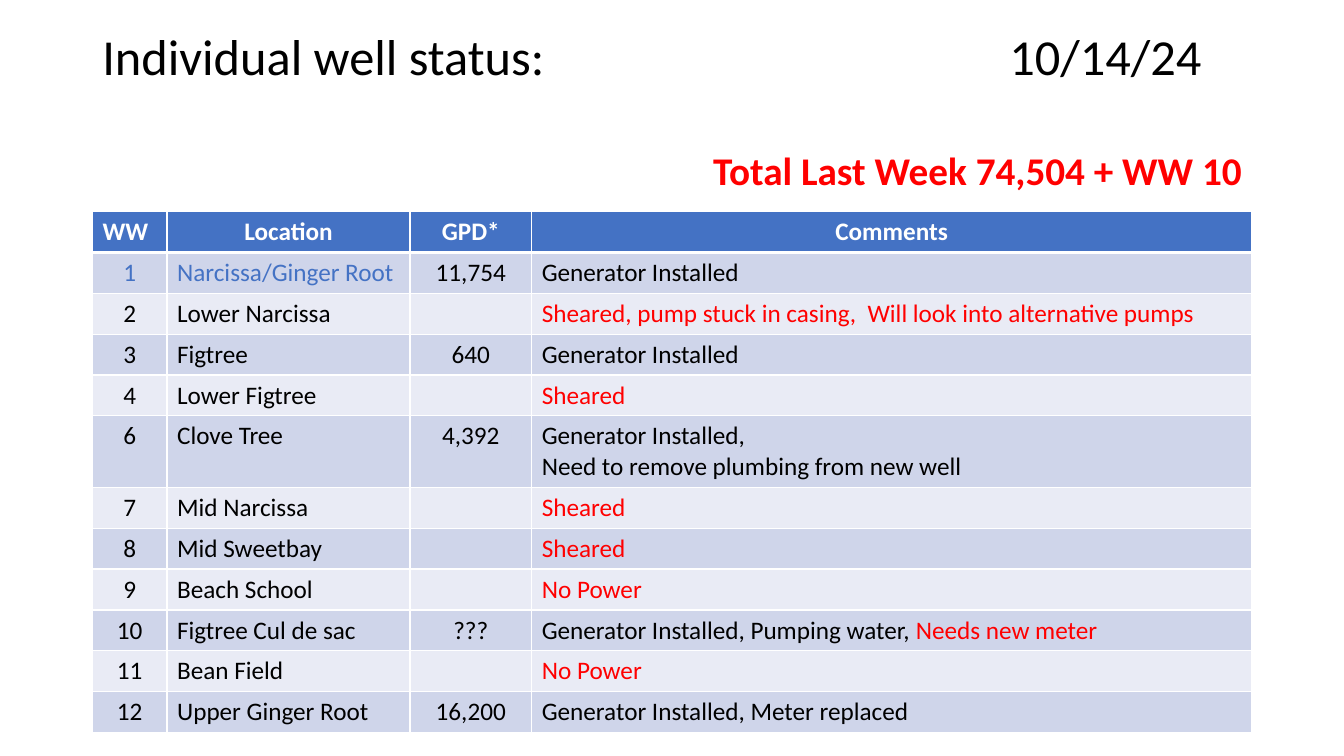
from lxml import etree
from pptx import Presentation, util as u
from pptx.dml.color import RGBColor
from pptx.enum import text
from pptx.oxml import ns

BLACK, WHITE, RED, BLUE = "000000", "FFFFFF", "FF0000", "4472C4"
BANDS = ("CFD5EA", "E9EBF5")
CENTER, LEFT = text.PP_ALIGN.CENTER, text.PP_ALIGN.LEFT


def color(value):
    return RGBColor.from_string(value)


class StatusSlide:
    font_name = "Calibri"

    def __init__(self, presentation):
        self.slide = presentation.slides.add_slide(presentation.slide_layouts[6])

    def add_run(self, paragraph, words, size, fill, bold=False):
        run = paragraph.add_run()
        run.text = words
        style = {"name": self.font_name, "size": u.Pt(size), "bold": bold}
        for name, value in style.items():
            setattr(run.font, name, value)
        run.font.color.rgb = color(fill)

    def add_title(self, box, lines, tab):
        frame = self.slide.shapes.add_textbox(*map(u.Cm, box)).text_frame
        style = {"word_wrap": True, "vertical_anchor": text.MSO_ANCHOR.MIDDLE}
        for name, value in style.items():
            setattr(frame, name, value)
        for index, (words, size, fill, bold, layout) in enumerate(lines):
            paragraph = frame.add_paragraph() if index else frame.paragraphs[0]
            for name, value in layout.items():
                setattr(paragraph, name, value)
            self.add_run(paragraph, words, size, fill, bold)
        # Tab stop that places the date
        properties = frame.paragraphs[0]._p.get_or_add_pPr()
        stops = etree.SubElement(properties, ns.qn("a:tabLst"))
        etree.SubElement(stops, ns.qn("a:tab"), pos=str(u.Cm(tab)), algn="l")

    def add_borders(self, cell, widths):
        properties = cell._tc.get_or_add_tcPr()
        for side, width in widths.items():
            line = etree.SubElement(properties, ns.qn(f"a:ln{side}"), w=str(u.Pt(width)))
            fill = etree.SubElement(line, ns.qn("a:solidFill"))
            etree.SubElement(fill, ns.qn("a:srgbClr"), val=WHITE)

    def fill_cell(self, cell, paragraphs, fill, align, bold, widths):
        self.add_borders(cell, widths)
        cell.fill.solid()
        cell.fill.fore_color.rgb = color(fill)
        for index, runs in enumerate(paragraphs):
            frame = cell.text_frame
            paragraph = frame.add_paragraph() if index else frame.paragraphs[0]
            paragraph.alignment = align
            for words, font_color in runs:
                self.add_run(paragraph, words, 18, font_color, bold)

    def add_table(self, left, top, columns, heights, header, rows):
        table = self.slide.shapes.add_table(
            len(heights), len(columns), u.Cm(left), u.Cm(top),
            u.Cm(sum(columns)), u.Cm(sum(heights))).table
        for column, width in zip(table.columns, columns):
            column.width = u.Cm(width)
        for row, height in zip(table.rows, heights):
            row.height = u.Cm(height)
        for index, words in enumerate(header):
            self.fill_cell(table.cell(0, index), [[(words, WHITE)]], BLUE,
                           CENTER if index else LEFT, True,
                           {"L": 1, "R": 1, "T": 1, "B": 3})
        for number, (well, location, gallons, comments) in enumerate(rows, 1):
            accent = BLUE if number == 1 else BLACK
            cells = ([[(well, accent)]], [[(location, accent)]],
                     [[(gallons, BLACK)]] if gallons else [], comments)
            widths = {"L": 1, "R": 1, "T": 3 if number == 1 else 1, "B": 1}
            for index, paragraphs in enumerate(cells):
                self.fill_cell(table.cell(number, index), paragraphs,
                               BANDS[(number - 1) % 2],
                               LEFT if index in (1, 3) else CENTER, False, widths)


# Well data: number, location, gallons per day, comment paragraphs
INSTALLED = [[("Generator Installed", BLACK)]]
SHEARED = [[("Sheared", RED)]]
NO_POWER = [[("No Power", RED)]]
WELLS = [
    ("1", "Narcissa/Ginger Root", "11,754", INSTALLED),
    ("2", "Lower Narcissa", "",
     [[("Sheared, pump stuck in casing,  Will look into alternative pumps", RED)]]),
    ("3", "Figtree", "640", INSTALLED),
    ("4", "Lower Figtree", "", SHEARED),
    ("6", "Clove Tree", "4,392", [[("Generator Installed,", BLACK)],
                                  [("Need to remove plumbing from new well", BLACK)]]),
    ("7", "Mid Narcissa", "", SHEARED),
    ("8", "Mid Sweetbay", "", SHEARED),
    ("9", "Beach School", "", NO_POWER),
    ("10", "Figtree Cul de sac", "???", [[("Generator Installed, Pumping water, ", BLACK),
                                          ("Needs new meter", RED)]]),
    ("11", "Bean Field", "", NO_POWER),
    ("12", "Upper Ginger Root", "16,200",
     [[("Generator Installed, Meter replaced", BLACK)]]),
]


def main():
    presentation = Presentation()
    presentation.slide_width, presentation.slide_height = u.Cm(33.87), u.Cm(19.05)
    status = StatusSlide(presentation)

    # Title, date and weekly total
    status.add_title((2.33, 1.01, 29.21, 3.68), [
        ("Individual well status:\t10/14/24", 36, BLACK, False, {"line_spacing": 0.9}),
        ("Total Last Week 74,504 + WW 10", 28, RED, True,
         {"line_spacing": 0.9, "space_before": u.Pt(46),
          "alignment": text.PP_ALIGN.RIGHT}),
    ], tab=22.86)

    # Well table, with a taller row for each two-line comment
    heights = [1.03] + [1.03 + 0.77 * (len(well[3]) - 1) for well in WELLS]
    status.add_table(2.33, 5.33, (1.88, 6.12, 3.07, 18.14), heights,
                     ("WW", "Location", "GPD*", "Comments"), WELLS)
    presentation.save("out.pptx")


if __name__ == "__main__":
    main()
